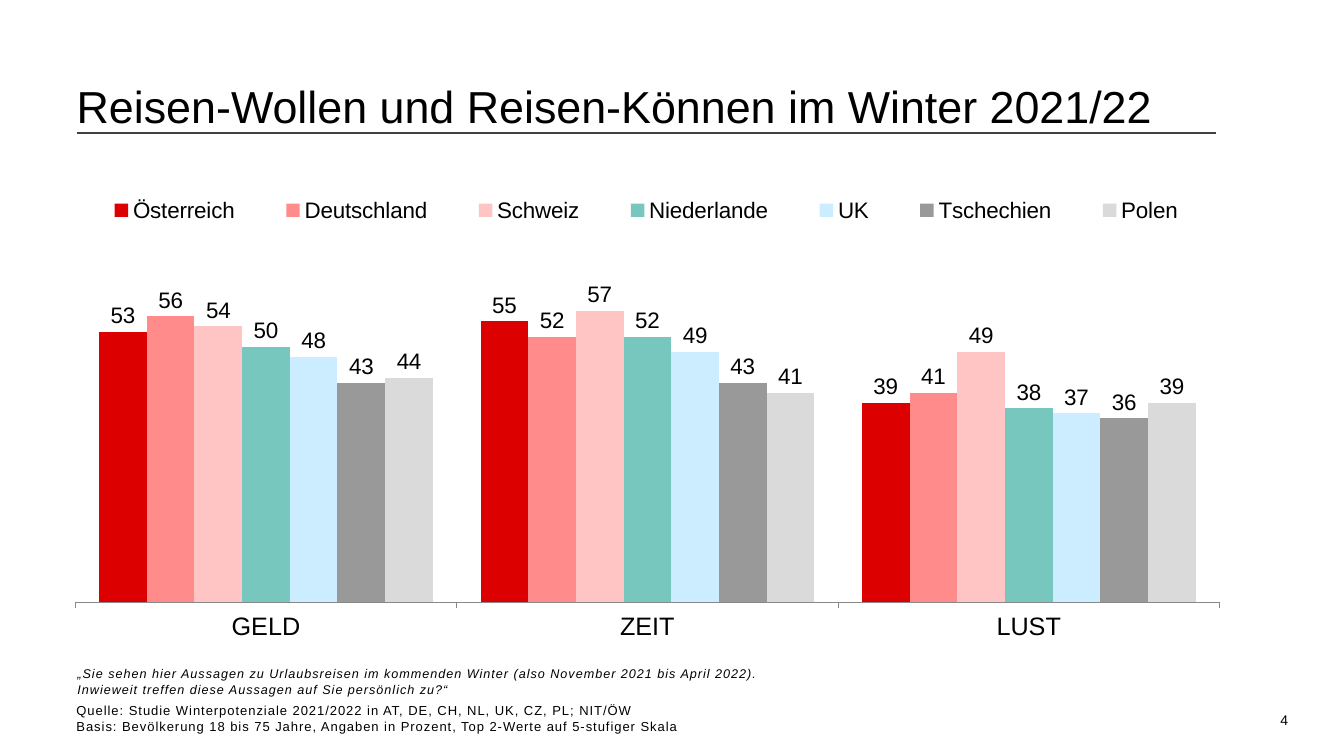
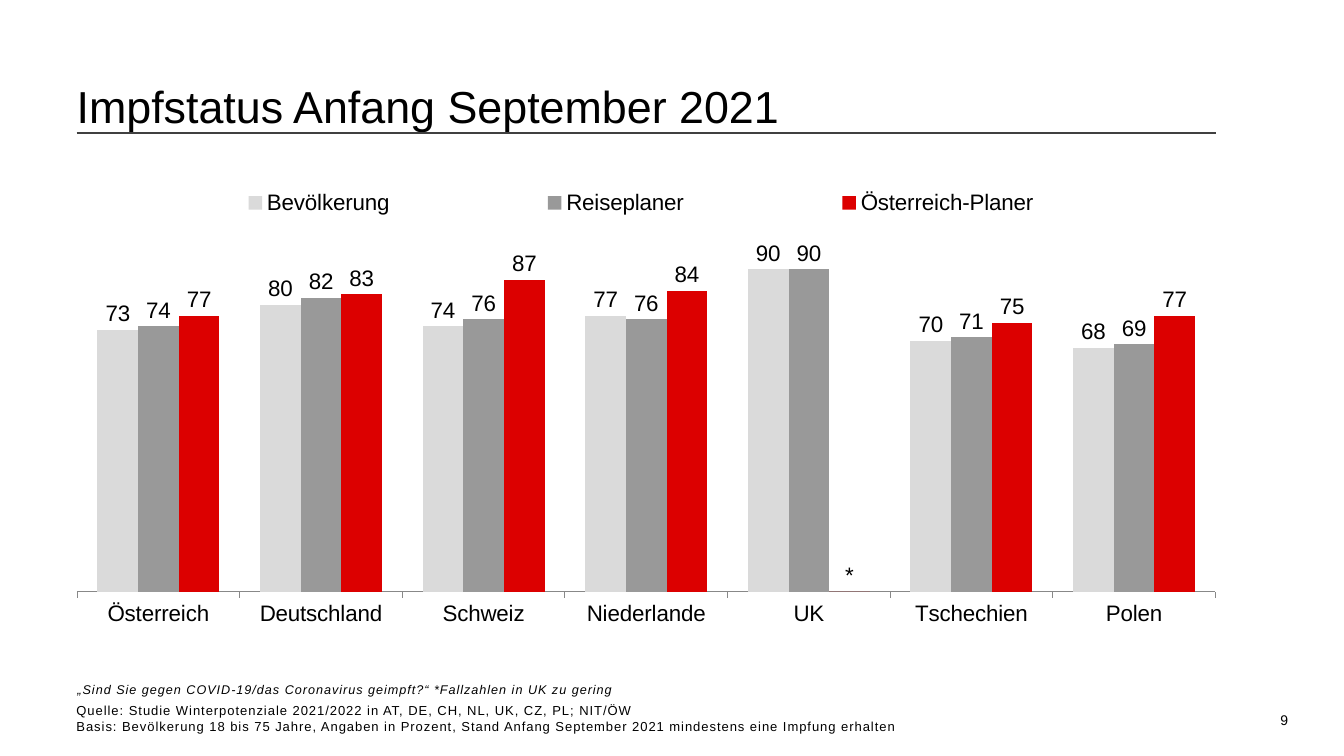
from dataclasses import dataclass

import lxml.etree
import pptx
import pptx.chart.data
import pptx.dml.color
import pptx.enum.chart
import pptx.enum.text
import pptx.oxml.ns
import pptx.oxml.xmlchemy
import pptx.util

Inches = pptx.util.Inches
Pt = pptx.util.Pt
Anchor = pptx.enum.text.MSO_ANCHOR
qn = pptx.oxml.ns.qn
new_element = pptx.oxml.xmlchemy.OxmlElement


@dataclass(frozen=True)
class Theme:
    font: str = "Arial"
    text: str = "000000"
    title_rule: str = "404040"
    axis: str = "888888"
    red: str = "DC0000"
    coral: str = "FF8B8B"
    rose: str = "FFC5C5"
    teal: str = "77C7BE"
    sky: str = "CCECFF"
    gray: str = "999999"
    silver: str = "DADADA"
    title_size: float = 32
    chart_size: float = 16
    page_size: float = 10
    source_size: float = 9.3
    question_size: float = 9
    note_spacing: float = 0.7


THEME = Theme()


def rgb(value):
    return pptx.dml.color.RGBColor.from_string(value)


def style_font(font, size, italic=False):
    font.name = THEME.font
    font.size = Pt(size)
    font.bold = False
    font.italic = italic
    font.color.rgb = rgb(THEME.text)


def write_text(frame, text, size, italic=False, spacing=0):
    """Fill a text frame, one paragraph a line; spacing is in points."""
    frame.text = text
    for paragraph in frame.paragraphs:
        for run in paragraph.runs:
            style_font(run.font, size, italic)
            if spacing:
                run.font._element.set("spc", str(round(spacing * 100)))


def place_chart_part(part, index, bounds, inner=False):
    """Give a plot area or legend its bounds as fractions of the chart."""
    for old in part.findall(qn("c:layout")):
        part.remove(old)
    layout = new_element("c:layout")
    manual = lxml.etree.SubElement(layout, qn("c:manualLayout"))
    settings = [("layoutTarget", "inner")] if inner else []
    settings += [("xMode", "edge"), ("yMode", "edge")]
    settings += zip("xywh", bounds)
    for tag, value in settings:
        lxml.etree.SubElement(manual, qn(f"c:{tag}")).set("val", str(value))
    part.insert(index, layout)


class Deck:
    def __init__(self):
        self.presentation = pptx.Presentation()
        self.presentation.slide_width = Inches(13.33)
        self.presentation.slide_height = Inches(7.5)
        self.slide = None

    def start_slide(self, title, page, question, source):
        layout = self.presentation.slide_layouts[6]
        self.slide = self.presentation.slides.add_slide(layout)
        self.title(title)
        self.note(page, (12.6, 7.01, 0.7, 0.4), size=THEME.page_size)
        self.note(question, (0.67, 6.56, 8.74, 0.4), anchor=Anchor.BOTTOM,
                  size=THEME.question_size, italic=True,
                  spacing=THEME.note_spacing)
        self.note(source, (0.66, 6.92, 10, 0.41), size=THEME.source_size,
                  spacing=THEME.note_spacing)

    def title(self, text):
        """Add the title as a one-cell table ruled along its bottom edge."""
        bounds = map(Inches, (0.76, 0.59, 11.3, 0.73))
        table = self.slide.shapes.add_table(1, 1, *bounds).table
        table.first_row = table.horz_banding = False
        cell = table.cell(0, 0)
        cell.margin_left = cell.margin_right = 0
        cell.margin_top = cell.margin_bottom = 0
        cell.vertical_anchor = Anchor.BOTTOM
        cell.fill.background()
        write_text(cell.text_frame, text, size=THEME.title_size)
        properties = cell._tc.get_or_add_tcPr()
        for index, side in enumerate("LRTB"):
            border = new_element(f"a:ln{side}")
            if side == "B":
                border.set("w", str(Pt(1)))
                fill = lxml.etree.SubElement(border, qn("a:solidFill"))
                color = lxml.etree.SubElement(fill, qn("a:srgbClr"))
                color.set("val", THEME.title_rule)
            else:
                lxml.etree.SubElement(border, qn("a:noFill"))
            properties.insert(index, border)

    def note(self, text, bounds, anchor=Anchor.TOP, **text_format):
        box = self.slide.shapes.add_textbox(*map(Inches, bounds))
        box.text_frame.word_wrap = True
        box.text_frame.vertical_anchor = anchor
        write_text(box.text_frame, text, **text_format)

    def column_chart(self, bounds, categories, series, maximum, category_size,
                     plot_bounds, legend_bounds):
        """Add clustered columns; series holds (name, color, values) rows."""
        data = pptx.chart.data.CategoryChartData(number_format="0")
        data.categories = categories
        for name, _, values in series:
            data.add_series(name, values)
        chart = self.slide.shapes.add_chart(
            pptx.enum.chart.XL_CHART_TYPE.COLUMN_CLUSTERED,
            *map(Inches, bounds), data).chart
        chart.has_title = False
        style_font(chart.font, THEME.chart_size)

        plot = chart.plots[0]
        plot.gap_width = 100
        plot.overlap = 0
        plot.vary_by_categories = False
        for columns, (_, color, _) in zip(plot.series, series):
            columns.format.fill.solid()
            columns.format.fill.fore_color.rgb = rgb(color)
            columns.invert_if_negative = False
            labels = columns.data_labels
            labels.show_value = True
            labels.number_format = "0"
            labels.number_format_is_linked = False
            labels.position = pptx.enum.chart.XL_LABEL_POSITION.OUTSIDE_END
            style_font(labels.font, THEME.chart_size)

        ticks = pptx.enum.chart.XL_TICK_MARK
        chart.category_axis.major_tick_mark = ticks.OUTSIDE
        chart.category_axis.format.line.color.rgb = rgb(THEME.axis)
        chart.category_axis.format.line.width = Pt(0.75)
        style_font(chart.category_axis.tick_labels.font, category_size)
        chart.value_axis.minimum_scale = 0
        chart.value_axis.maximum_scale = maximum
        chart.value_axis.has_major_gridlines = False
        chart.value_axis.visible = False

        chart.has_legend = True
        chart.legend.position = pptx.enum.chart.XL_LEGEND_POSITION.RIGHT
        chart.legend.include_in_layout = False
        style_font(chart.legend.font, THEME.chart_size)
        plot_area = chart._chartSpace.find(".//" + qn("c:plotArea"))
        place_chart_part(plot_area, 0, plot_bounds, inner=True)
        place_chart_part(chart.legend._element, 1, legend_bounds)
        return chart


def add_travel_slide(deck):
    deck.start_slide(
        "Reisen-Wollen und Reisen-Können im Winter 2021/22", "4",
        "„Sie sehen hier Aussagen zu Urlaubsreisen im kommenden Winter "
        "(also November 2021 bis April 2022).\n"
        "Inwieweit treffen diese Aussagen auf Sie persönlich zu?“",
        "Quelle: Studie Winterpotenziale 2021/2022 in AT, DE, CH, NL, UK, CZ, "
        "PL; NIT/ÖW\nBasis: Bevölkerung 18 bis 75 Jahre, Angaben in Prozent, "
        "Top 2-Werte auf 5-stufiger Skala")
    deck.column_chart(
        (0.56, 1.64, 11.7, 4.96), ["GELD", "ZEIT", "LUST"],
        [("Österreich", THEME.red, (53, 55, 39)),
         ("Deutschland", THEME.coral, (56, 52, 41)),
         ("Schweiz", THEME.rose, (54, 57, 49)),
         ("Niederlande", THEME.teal, (50, 52, 38)),
         ("UK", THEME.sky, (48, 49, 37)),
         ("Tschechien", THEME.gray, (43, 43, 36)),
         ("Polen", THEME.silver, (44, 41, 39))],
        maximum=70, category_size=18,
        plot_bounds=(0.016, 0.159, 0.97, 0.715),
        legend_bounds=(0.012, 0.04, 0.976, 0.1))


def add_vaccination_slide(deck):
    deck.start_slide(
        "Impfstatus Anfang September 2021", "9",
        "„Sind Sie gegen COVID-19/das Coronavirus geimpft?“ "
        "*Fallzahlen in UK zu gering",
        "Quelle: Studie Winterpotenziale 2021/2022 in AT, DE, CH, NL, UK, CZ, "
        "PL; NIT/ÖW\nBasis: Bevölkerung 18 bis 75 Jahre, Angaben in Prozent, "
        "Stand Anfang September 2021 mindestens eine Impfung erhalten")
    countries = ["Österreich", "Deutschland", "Schweiz", "Niederlande", "UK",
                 "Tschechien", "Polen"]
    chart = deck.column_chart(
        (0.76, 1.75, 11.3, 4.71), countries,
        [("Bevölkerung", THEME.silver, (73, 80, 74, 77, 90, 70, 68)),
         ("Reiseplaner", THEME.gray, (74, 82, 76, 76, 90, 71, 69)),
         ("Österreich-Planer", THEME.red, (77, 83, 87, 84, 0, 75, 77))],
        maximum=100, category_size=16,
        plot_bounds=(0, 0.12, 1, 0.755),
        legend_bounds=(0.018, 0.006, 0.955, 0.1))
    austria_planners = chart.plots[0].series[2]
    too_few_cases = austria_planners.points[countries.index("UK")].data_label
    write_text(too_few_cases.text_frame, "*", size=THEME.chart_size)
    too_few_cases.position = pptx.enum.chart.XL_LABEL_POSITION.OUTSIDE_END


def main():
    deck = Deck()
    add_travel_slide(deck)
    add_vaccination_slide(deck)
    deck.presentation.save("out.pptx")


if __name__ == "__main__":
    main()
